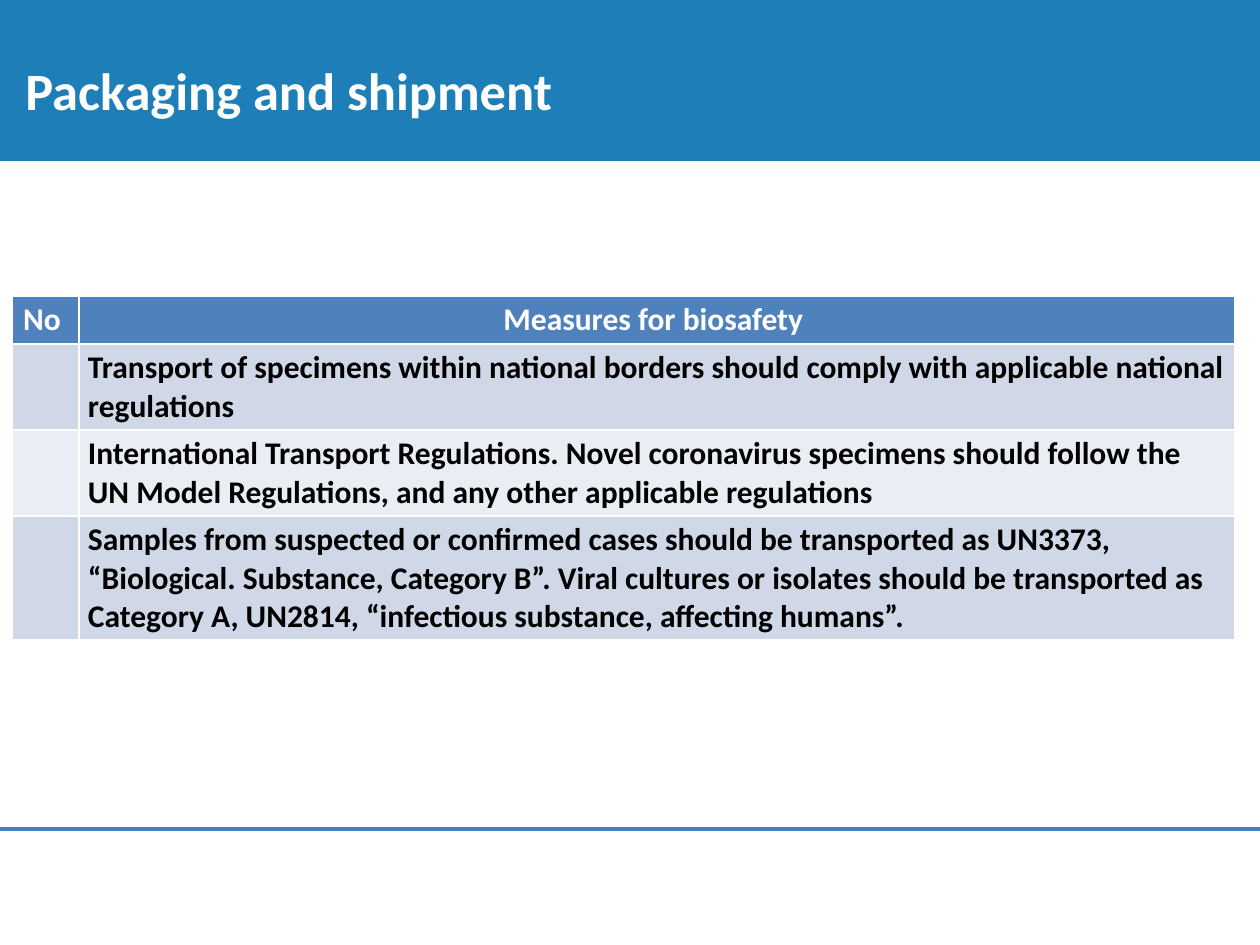
from dataclasses import dataclass

from lxml.etree import SubElement
from pptx import Presentation
from pptx.dml.color import RGBColor
from pptx.enum.shapes import MSO_CONNECTOR, MSO_SHAPE
from pptx.enum.text import MSO_ANCHOR, PP_ALIGN
from pptx.oxml.ns import qn
from pptx.util import Emu, Pt

PX_PER_INCH = 126
FONT = "Calibri"
WHITE = RGBColor(0xFF, 0xFF, 0xFF)
BLACK = RGBColor(0, 0, 0)
BAND_BLUE = RGBColor(0x1E, 0x7F, 0xB8)
RULE_BLUE = RGBColor(0x4B, 0x7E, 0xBC)
HEADER_FILL = RGBColor(0x4F, 0x81, 0xBD)
ROW_FILLS = (RGBColor(0xD0, 0xD8, 0xE8), RGBColor(0xE9, 0xED, 0xF4))
COLUMN_WIDTHS = (67, 1156)


@dataclass
class MeasureRow:
    height: int
    measure: str
    number: str = ""


ROWS = [
    MeasureRow(48, "Measures for biosafety ", "No "),
    MeasureRow(86, "Transport of specimens within national borders should comply with "
                   "applicable national regulations"),
    MeasureRow(86, "International Transport Regulations. Novel coronavirus specimens should "
                   "follow the UN Model Regulations, and any other applicable regulations"),
    MeasureRow(122, "Samples from suspected or confirmed cases should be transported as "
                    "UN3373, “Biological. Substance, Category B”. Viral cultures or "
                    "isolates should be transported as Category A, UN2814, “infectious "
                    "substance, affecting humans”."),
]


def px(n: int) -> Emu:
    return Emu(round(n * 914400 / PX_PER_INCH))


def style_font(font, size: int, color: RGBColor) -> None:
    font.name, font.size, font.bold = FONT, Pt(size), True
    font.color.rgb = color


def add_band(s) -> None:
    sp = s.shapes.add_shape(MSO_SHAPE.RECTANGLE, 0, px(-4), px(1260), px(165))
    sp.shadow.inherit = False
    sp.fill.solid()
    sp.fill.fore_color.rgb = BAND_BLUE
    sp.line.fill.background()


def add_title(s, text: str) -> None:
    sp = s.shapes.add_textbox(px(13), px(21), px(1260), px(137))
    tf = sp.text_frame
    tf.word_wrap = True
    tf.vertical_anchor = MSO_ANCHOR.MIDDLE
    p = tf.paragraphs[0]
    p.text = text
    style_font(p.font, 30, WHITE)


def add_footer_rule(s) -> None:
    line = s.shapes.add_connector(MSO_CONNECTOR.STRAIGHT, px(-1), px(829), px(1260), px(829))
    line.line.color.rgb = RULE_BLUE
    line.line.width = Pt(2)
    SubElement(line._element.spPr, qn("a:effectLst"))


def set_borders(cell) -> None:
    """Draw 1 pt white borders; call before the cell is filled."""
    tc_pr = cell._tc.get_or_add_tcPr()
    for side in "LRTB":
        ln = SubElement(tc_pr, qn(f"a:ln{side}"), w=str(Pt(1)))
        SubElement(SubElement(ln, qn("a:solidFill")), qn("a:srgbClr"), val=str(WHITE))


def add_measures_table(s) -> None:
    height = sum(row.height for row in ROWS)
    table = s.shapes.add_table(len(ROWS), len(COLUMN_WIDTHS), px(12), px(296),
                               px(sum(COLUMN_WIDTHS)), px(height)).table
    for column, width in zip(table.columns, COLUMN_WIDTHS):
        column.width = px(width)
    for i, (row, content) in enumerate(zip(table.rows, ROWS)):
        row.height = px(content.height)
        header = i == 0
        for cell, text in zip(row.cells, (content.number, content.measure)):
            cell.margin_left = cell.margin_right = px(9)
            cell.margin_top = cell.margin_bottom = px(5)
            set_borders(cell)
            cell.fill.solid()
            cell.fill.fore_color.rgb = HEADER_FILL if header else ROW_FILLS[(i - 1) % 2]
            cell.text = text
            p = cell.text_frame.paragraphs[0]
            p.alignment = PP_ALIGN.CENTER if header else PP_ALIGN.LEFT
            style_font(p.font, 18, WHITE if header else BLACK)


def main() -> None:
    prs = Presentation()
    prs.slide_width, prs.slide_height = px(1260), px(945)
    s = prs.slides.add_slide(prs.slide_layouts[6])
    add_band(s)
    add_footer_rule(s)
    add_title(s, "Packaging and shipment")
    add_measures_table(s)
    prs.save("out.pptx")


if __name__ == "__main__":
    main()
